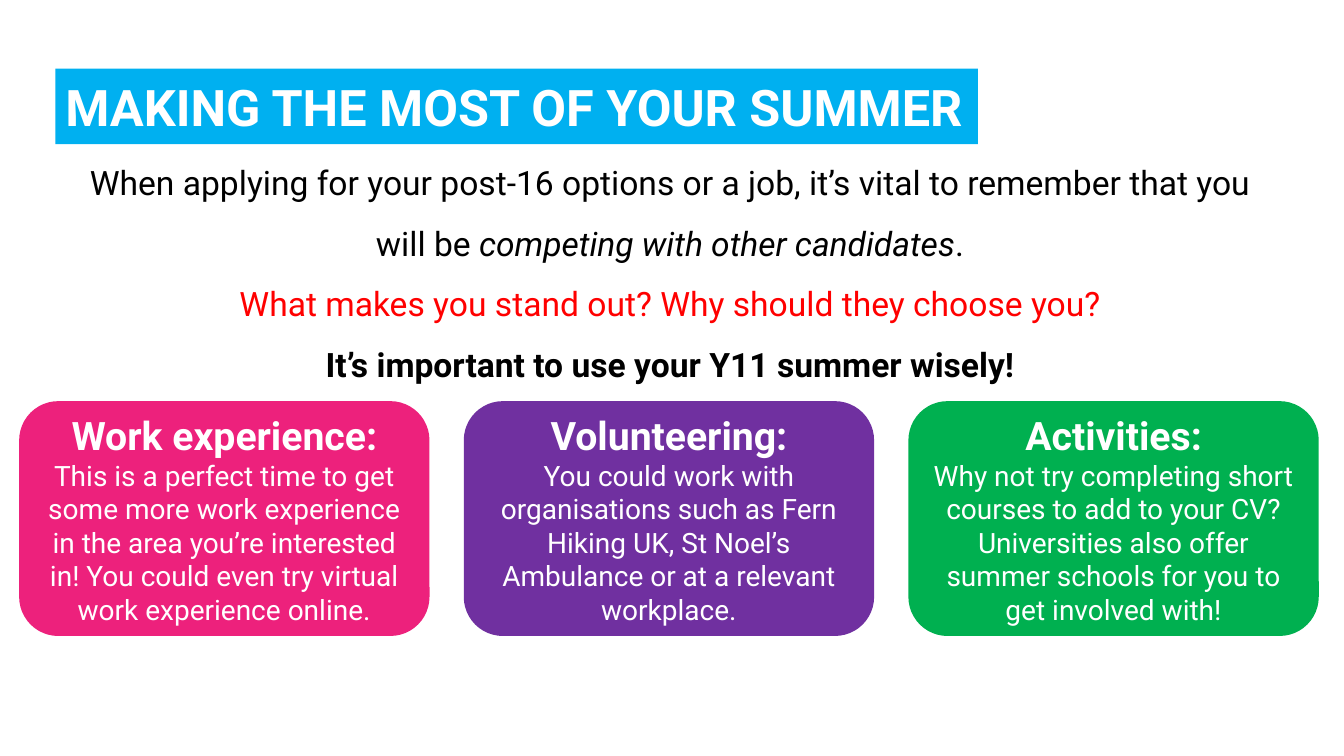
from pptx import Presentation
from pptx.dml.color import RGBColor
from pptx.enum.shapes import MSO_SHAPE as Shape
from pptx.enum.text import MSO_ANCHOR as Anchor, PP_ALIGN as Align
from pptx.util import Inches, Pt

COLORS = {
    "white": "FFFFFF",
    "black": "000000",
    "red": "FF0000",
    "blue": "00B0F0",
    "pink": "ED217C",
    "purple": "7030A0",
    "green": "00B050",
}

CARDS = [
    ("pink", "Work experience:",
     "This is a perfect time to get some more work experience in the area you’re "
     "interested in! You could even try virtual work experience online."),
    ("purple", "Volunteering:",
     "You could work with organisations such as Fern Hiking UK, St Noel’s Ambulance "
     "or at a relevant workplace."),
    ("green", "Activities:",
     "Why not try completing short courses to add to your CV? Universities also offer "
     "summer schools for you to get involved with!"),
]
CARD_LEFT, CARD_TOP, CARD_PITCH = 0.19, 3.98, 4.41
CARD_WIDTH, CARD_HEIGHT = 4.07, 2.33


def styled(text, **text_format):
    return text, text_format


class SlideBuilder:
    """Draws styled elements on the current slide."""

    font_name = "Roboto"

    def __init__(self, slide):
        self.slide = slide

    def fill_text(self, shape, paragraphs, align=Align.CENTER, spacing=None):
        frame = shape.text_frame
        frame.word_wrap = True
        for index, pieces in enumerate(paragraphs):
            paragraph = frame.add_paragraph() if index else frame.paragraphs[0]
            paragraph.alignment = align
            if spacing:
                paragraph.line_spacing = spacing
            for text, text_format in pieces:
                self.add_piece(paragraph, text, **text_format)

    def add_piece(self, paragraph, text, size=24, color="black", bold=False, italic=False):
        piece = paragraph.add_run()
        piece.text = text
        font = piece.font
        font.name, font.size = self.font_name, Pt(size)
        font.bold, font.italic = bold, italic
        font.color.rgb = RGBColor.from_string(COLORS[color])

    def panel(self, kind, box, fill, paragraphs, align=Align.CENTER):
        shape = self.slide.shapes.add_shape(kind, *map(Inches, box))
        shape.shadow.inherit = False
        shape.fill.solid()
        shape.fill.fore_color.rgb = RGBColor.from_string(COLORS[fill])
        shape.line.fill.background()
        shape.text_frame.vertical_anchor = Anchor.MIDDLE
        self.fill_text(shape, paragraphs, align)

    def text_box(self, box, paragraphs, spacing):
        shape = self.slide.shapes.add_textbox(*map(Inches, box))
        self.fill_text(shape, paragraphs, spacing=spacing)


def main():
    presentation = Presentation()
    presentation.slide_width, presentation.slide_height = Inches(13.33), Inches(7.5)
    builder = SlideBuilder(presentation.slides.add_slide(presentation.slide_layouts[6]))

    builder.panel(
        Shape.RECTANGLE, (0.55, 0.68, 9.15, 0.75), "blue",
        [[styled("MAKING THE MOST OF YOUR SUMMER", size=36, color="white", bold=True)]],
        Align.LEFT,
    )
    builder.text_box((0.55, 1.36, 12.19, 2.46), [
        [styled("When applying for your post-16 options or a job, it’s vital to remember "
                "that you will be "),
         styled("competing with other candidates", italic=True),
         styled(".")],
        [styled("What makes you stand out? Why should they choose you?", color="red")],
        [styled("It’s important to use your Y11 summer wisely!", bold=True)],
    ], spacing=1.5)

    for index, (fill, heading, body) in enumerate(CARDS):
        box = (CARD_LEFT + index * CARD_PITCH, CARD_TOP, CARD_WIDTH, CARD_HEIGHT)
        builder.panel(Shape.ROUNDED_RECTANGLE, box, fill, [
            [styled(heading, size=28, color="white", bold=True)],
            [styled(body, size=20, color="white")],
        ])

    presentation.save("out.pptx")


if __name__ == "__main__":
    main()
